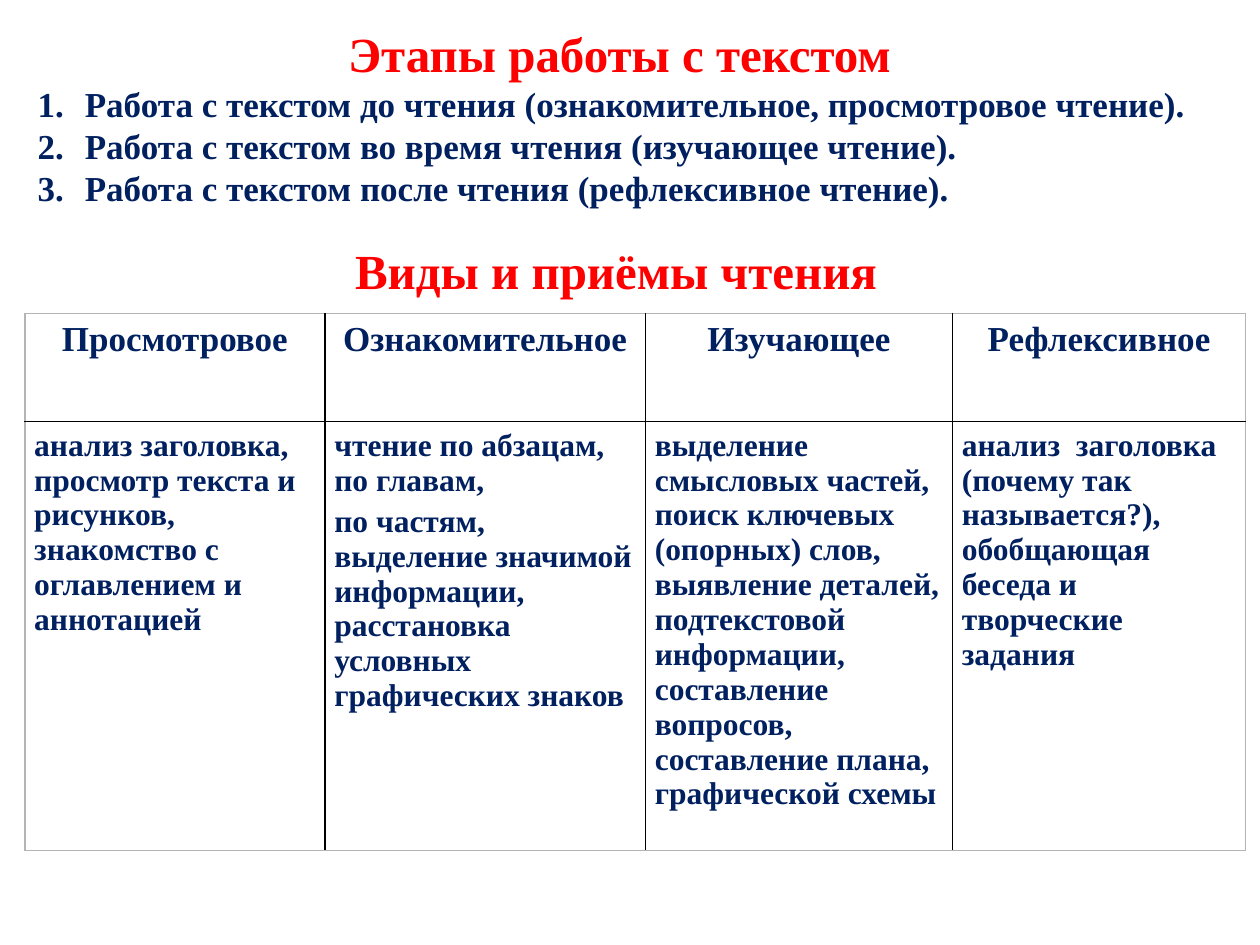
from dataclasses import dataclass

from lxml.etree import SubElement
from pptx import Presentation
from pptx.dml.color import RGBColor
from pptx.enum.text import MSO_ANCHOR, MSO_AUTO_SIZE, PP_ALIGN
from pptx.oxml.ns import qn
from pptx.slide import Slide
from pptx.util import Cm, Pt

RED = RGBColor(0xFF, 0x00, 0x00)
NAVY = RGBColor(0x00, 0x20, 0x60)
WHITE = RGBColor(0xFF, 0xFF, 0xFF)
BLACK = RGBColor(0x00, 0x00, 0x00)
GREY = RGBColor(0xB4, 0xB4, 0xB4)

STAGES = [
    "Работа с текстом до чтения (ознакомительное, просмотровое чтение).",
    "Работа с текстом во время чтения (изучающее чтение).",
    "Работа с текстом после чтения (рефлексивное чтение).",
]

# Kind of reading: (column width in cm, techniques)
READING_KINDS = {
    "Просмотровое": (6.05, [
        "анализ заголовка, просмотр текста и рисунков, знакомство с "
        "оглавлением и аннотацией"]),
    "Ознакомительное": (6.46, [
        "чтение по абзацам, по главам,",
        "по частям, выделение значимой информации, расстановка условных "
        "графических знаков"]),
    "Изучающее": (6.19, [
        "выделение смысловых частей, поиск ключевых (опорных) слов,  "
        "выявление деталей, подтекстовой информации, составление вопросов,  "
        "составление плана, графической схемы"]),
    "Рефлексивное": (5.91, [
        "анализ  заголовка (почему так называется?),  обобщающая беседа "
        "и творческие задания"]),
}
ROW_HEIGHTS = [2.18, 8.64]


def apply(target, values):
    for name, value in values.items():
        setattr(target, name, value)


@dataclass
class ReadingSlide:
    slide: Slide
    font_name: str = "Times New Roman"
    heading_size: int = 28
    list_size: int = 20
    body_size: int = 18

    def add_lines(self, frame, lines, size, color, **paragraph_format):
        for index, line in enumerate(lines):
            paragraph = frame.paragraphs[0] if index == 0 else frame.add_paragraph()
            run = paragraph.add_run()
            run.text = line
            apply(run.font, {"name": self.font_name, "size": Pt(size), "bold": True})
            run.font.color.rgb = color
            apply(paragraph, paragraph_format)

    def place(self, shape, left, top, width, height):
        apply(shape, {"left": Cm(left), "top": Cm(top),
                      "width": Cm(width), "height": Cm(height)})
        apply(shape.text_frame, {"word_wrap": True, "auto_size": MSO_AUTO_SIZE.NONE,
                                 "vertical_anchor": MSO_ANCHOR.TOP})

    def title(self, text, *box):
        title = self.slide.shapes.title
        self.place(title, *box)
        self.add_lines(title.text_frame, [text], self.heading_size, RED,
                       alignment=PP_ALIGN.CENTER, line_spacing=Pt(34))

    def text_box(self, lines, size, color, spacing, *box):
        text_box = self.slide.shapes.add_textbox(*map(Cm, box))
        self.place(text_box, *box)
        self.add_lines(text_box.text_frame, lines, size, color,
                       line_spacing=Pt(spacing))
        return text_box

    def numbered_list(self, lines, *box):
        numbered = self.text_box(lines, self.list_size, NAVY, 24, *box)
        for paragraph in numbered.text_frame.paragraphs:
            properties = paragraph._p.get_or_add_pPr()
            properties.set("marL", str(Cm(0.95)))
            properties.set("indent", str(-Cm(0.95)))
            SubElement(properties, qn("a:buFont"), typeface=self.font_name)
            SubElement(properties, qn("a:buAutoNum"), type="arabicPeriod")

    def border(self, cell, side, color):
        line = SubElement(cell._tc.get_or_add_tcPr(), qn(f"a:ln{side}"), w=str(Pt(1)))
        SubElement(SubElement(line, qn("a:solidFill")), qn("a:srgbClr"), val=str(color))

    def reading_table(self, kinds, row_heights, left, top):
        widths = [width for width, _ in kinds.values()]
        table = self.slide.shapes.add_table(
            len(row_heights), len(widths), Cm(left), Cm(top),
            Cm(sum(widths)), Cm(sum(row_heights))).table
        apply(table, {"first_row": False, "horz_banding": False})
        for column, width in zip(table.columns, widths):
            column.width = Cm(width)
        for row, height in zip(table.rows, row_heights):
            row.height = Cm(height)

        last_row, last_column = len(row_heights) - 1, len(widths) - 1
        for column, (kind, (_, techniques)) in enumerate(kinds.items()):
            contents = [([kind], self.list_size, PP_ALIGN.CENTER),
                        (techniques, self.body_size, PP_ALIGN.LEFT)]
            for row, (lines, size, alignment) in enumerate(contents):
                cell = table.cell(row, column)
                apply(cell, {"margin_left": Cm(0.19), "margin_right": Cm(0.19),
                             "margin_top": Cm(0.13), "margin_bottom": Cm(0.13)})
                # Grey outside edges, black inner lines
                outer_edges = {"L": column == 0, "R": column == last_column,
                               "T": row == 0, "B": row == last_row}
                for side, is_outer in outer_edges.items():
                    self.border(cell, side, GREY if is_outer else BLACK)
                cell.fill.solid()
                cell.fill.fore_color.rgb = WHITE
                self.add_lines(cell.text_frame, lines, size, NAVY, alignment=alignment)
                for paragraph in cell.text_frame.paragraphs[1:]:
                    paragraph.space_before = Pt(0.2 * size)


def main():
    presentation = Presentation()
    apply(presentation, {"slide_width": Cm(25.4), "slide_height": Cm(19.05)})
    title_only = presentation.slide_layouts[5]
    reading = ReadingSlide(presentation.slides.add_slide(title_only))

    # Stages of working with a text
    reading.title("Этапы работы с текстом ", 0.51, 0.33, 24.2, 1.45)
    reading.numbered_list(STAGES, 0.51, 1.53, 24.2, 2.81)

    # Kinds of reading and their techniques
    reading.text_box(["Виды и приёмы чтения"], reading.heading_size, RED, 34,
                     6.91, 4.72, 11.73, 1.45)
    reading.reading_table(READING_KINDS, ROW_HEIGHTS, 0.5, 6.32)

    presentation.save("out.pptx")


if __name__ == "__main__":
    main()
